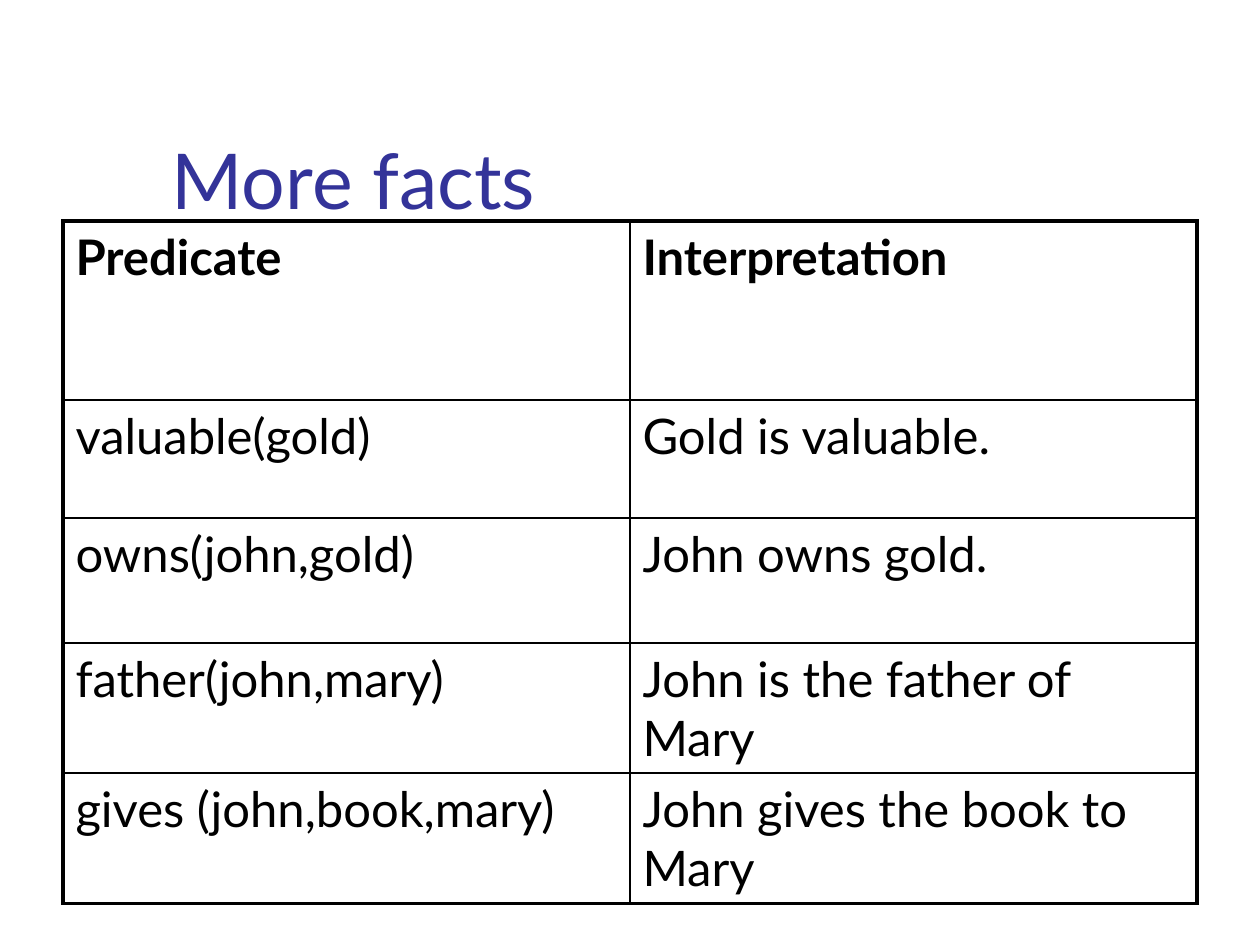
from dataclasses import dataclass

from lxml.etree import SubElement
from pptx import Presentation
from pptx.dml.color import RGBColor
from pptx.enum.text import MSO_ANCHOR, MSO_AUTO_SIZE, PP_ALIGN
from pptx.oxml.ns import qn
from pptx.util import Emu, Pt

EMU_PER_PX = 914400 // 126


@dataclass(frozen=True)
class Theme:
    font: str = "Lato"
    title_color: str = "333399"
    text_color: str = "000000"
    border_color: str = "000000"
    title_size: int = 44
    text_size: int = 28
    outer_border: float = 2.25
    inner_border: float = 1


THEME = Theme()

FACTS = [
    ("Predicate", "Interpretation"),
    ("valuable(gold)", "Gold is valuable."),
    ("owns(john,gold)", "John owns gold."),
    ("father(john,mary)", "John is the father of Mary"),
    ("gives (john,book,mary)", "John gives the book to Mary"),
]
ROW_HEIGHTS = [179, 118, 125, 130, 130]
COLUMN_WIDTH = 567


def px(length):
    return Emu(length * EMU_PER_PX)


def format_text(paragraph, size, color, bold=False):
    paragraph.alignment = PP_ALIGN.LEFT
    font = paragraph.font
    font.name = THEME.font
    font.size = Pt(size)
    font.bold = bold
    font.color.rgb = RGBColor.from_string(color)


def set_title(slide, text, left, top, width, height):
    title = slide.shapes.title
    title.left, title.top = px(left), px(top)
    title.width, title.height = px(width), px(height)
    frame = title.text_frame
    frame.text = text
    frame.word_wrap = True
    frame.auto_size = MSO_AUTO_SIZE.NONE
    frame.vertical_anchor = MSO_ANCHOR.BOTTOM
    format_text(frame.paragraphs[0], THEME.title_size, THEME.title_color)


def set_borders(cell, outer_sides):
    """Draw all four borders, thicker on the sides that lie on the table's edge."""
    properties = cell._tc.get_or_add_tcPr()
    for side in ("L", "R", "T", "B"):
        width = THEME.outer_border if side in outer_sides else THEME.inner_border
        line = SubElement(properties, qn(f"a:ln{side}"), w=str(Pt(width)))
        fill = SubElement(line, qn("a:solidFill"))
        SubElement(fill, qn("a:srgbClr"), val=THEME.border_color)


def add_fact_table(slide, facts, left, top):
    row_count, column_count = len(facts), len(facts[0])
    table = slide.shapes.add_table(
        row_count, column_count, px(left), px(top),
        px(COLUMN_WIDTH * column_count), px(sum(ROW_HEIGHTS)),
    ).table
    table.horz_banding = False
    for column in table.columns:
        column.width = px(COLUMN_WIDTH)
    for row_index, (row, height) in enumerate(zip(table.rows, ROW_HEIGHTS)):
        row.height = px(height)
        for column_index, cell in enumerate(row.cells):
            cell.text = facts[row_index][column_index]
            format_text(cell.text_frame.paragraphs[0], THEME.text_size,
                        THEME.text_color, bold=row_index == 0)
            edges = {
                "L": column_index == 0,
                "R": column_index == column_count - 1,
                "T": row_index == 0,
                "B": row_index == row_count - 1,
            }
            set_borders(cell, [side for side, outer in edges.items() if outer])
            cell.fill.background()


def main():
    presentation = Presentation()
    presentation.slide_width, presentation.slide_height = px(1260), px(945)
    title_only = presentation.slide_layouts[5]
    slide = presentation.slides.add_slide(title_only)
    set_title(slide, "More facts", 159, 29, 1074, 202)
    add_fact_table(slide, FACTS, 63, 221)
    presentation.save("out.pptx")


if __name__ == "__main__":
    main()
